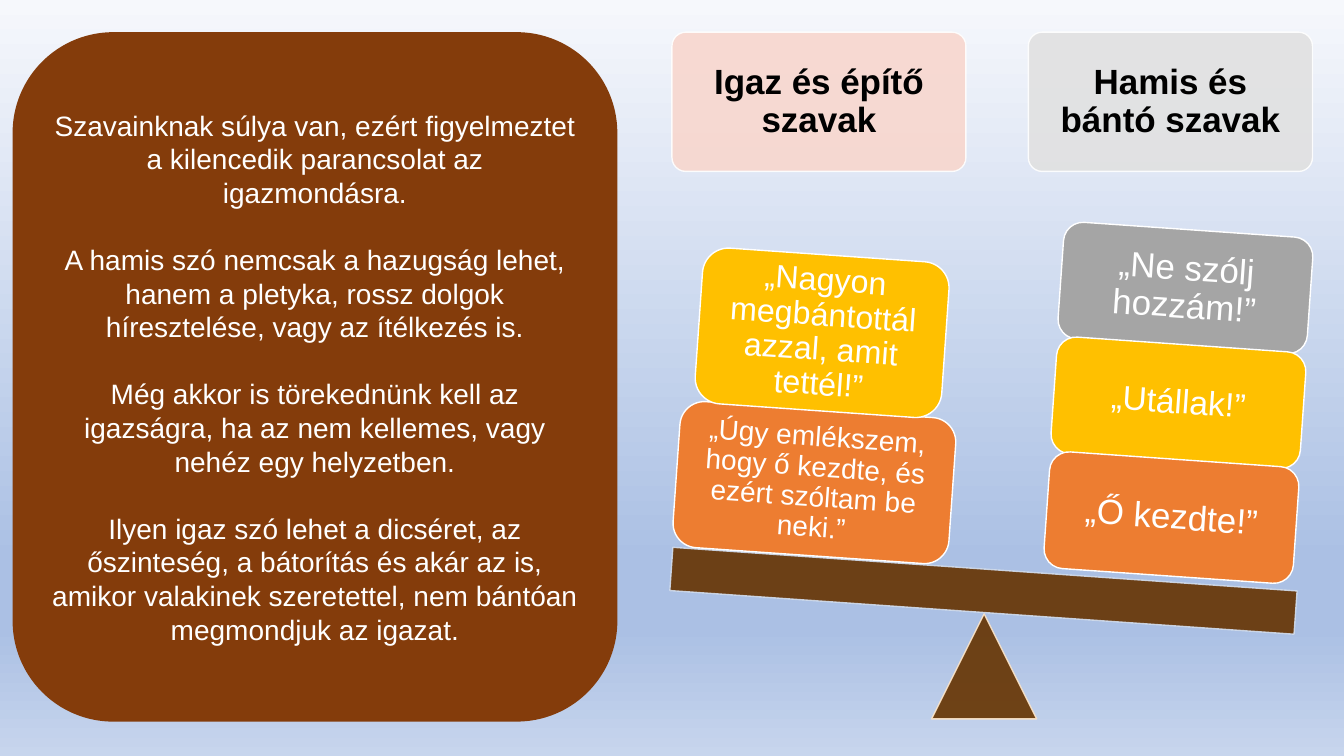
from copy import deepcopy

from pptx import Presentation
from pptx.dml.color import RGBColor
from pptx.enum.shapes import MSO_SHAPE as SHAPE
from pptx.enum.text import MSO_ANCHOR as ANCHOR, PP_ALIGN as ALIGN
from pptx.oxml.ns import qn
from pptx.util import Pt

COLORS = {
    "white": "FFFFFF", "black": "000000", "brown": "843C0B", "wood": "663300",
    "orange": "ED7D31", "yellow": "FFC000", "gray": "A5A5A5",
    "pink": "F8D7CE", "silver": "E1E1E1", "cream": "FFE8CC", "ice": "D2DEEF",
}
BACKGROUND = [(0, "F6F8FC"), (74, "ABC0E4"), (83, "ABC0E4"), (100, "C7D5ED")]
TILT = 4
LESSON = [
    "Szavainknak súlya van, ezért figyelmeztet a kilencedik parancsolat az igazmondásra.",
    "A hamis szó nemcsak a hazugság lehet, hanem a pletyka, rossz dolgok "
    "híresztelése, vagy az ítélkezés is.",
    "Még akkor is törekednünk kell az igazságra, ha az nem kellemes, vagy "
    "nehéz egy helyzetben.",
    "Ilyen igaz szó lehet a dicséret, az őszinteség, a bátorítás és akár az is, "
    "amikor valakinek szeretettel, nem bántóan megmondjuk az igazat.",
]
HURTFUL = [("„Ne szólj hozzám!”", "gray", 25), ("„Utállak!”", "yellow", 24),
           ("„Ő kezdte!”", "orange", 25)]


def rgb(name):
    return RGBColor.from_string(COLORS[name])


def set_opacity(fill, percent):
    color = fill._xPr.find(qn("a:solidFill"))[0]
    alpha = color.makeelement(qn("a:alpha"), {"val": str(percent * 1000)})
    color.append(alpha)


def paint_background(s):
    fill = s.background.fill
    fill.gradient()
    fill.gradient_angle = 270
    stops = fill._fill._gradFill.find(qn("a:gsLst"))
    while len(stops) < len(BACKGROUND):
        stops.append(deepcopy(stops[0]))
    for stop, (position, color) in zip(fill.gradient_stops, BACKGROUND):
        stop.position = position / 100
        stop.color.rgb = RGBColor.from_string(color)


def add_block(s, kind, box, fill, line=None, opacity=100, tilt=0):
    sp = s.shapes.add_shape(kind, *(Pt(v) for v in box))
    sp.shadow.inherit = False
    sp.rotation = tilt
    sp.fill.solid()
    sp.fill.fore_color.rgb = rgb(fill)
    if line:
        sp.line.color.rgb = rgb(line)
        sp.line.width = Pt(1)
    else:
        sp.line.fill.background()
    if opacity < 100:
        set_opacity(sp.fill, opacity)
        set_opacity(sp.line.fill, opacity)
    return sp


def add_text(sp, paragraphs, size, color="white", bold=False, spacing=None, gap=0, inset=7.2):
    tf = sp.text_frame
    tf.word_wrap = True
    tf.vertical_anchor = ANCHOR.MIDDLE
    tf.margin_left = tf.margin_right = Pt(inset)
    tf.margin_top = tf.margin_bottom = Pt(min(inset, 7.2))
    for i, text in enumerate(paragraphs):
        p = tf.add_paragraph() if i else tf.paragraphs[0]
        p.alignment = ALIGN.CENTER
        if spacing:
            p.line_spacing = spacing
        if i:
            p.space_before = Pt(gap)
        r = p.add_run()
        r.text = text
        r.font.name = "Arial"
        r.font.size = Pt(size)
        r.font.bold = bold
        r.font.color.rgb = rgb(color)


def add_header(s, left, width, text, fill):
    sp = add_block(s, SHAPE.ROUNDED_RECTANGLE, (left, 23, width, 99.5), fill, "white", 90)
    sp.adjustments[0] = 0.1
    add_text(sp, [text], 25, "black", bold=True, spacing=0.9)


def add_saying(s, box, text, fill, size, inset=7.2):
    sp = add_block(s, SHAPE.ROUNDED_RECTANGLE, box, fill, "white", tilt=TILT)
    add_text(sp, [text], size, spacing=0.9, inset=inset)


def main():
    prs = Presentation()
    prs.slide_width, prs.slide_height = Pt(960), Pt(540)
    s = prs.slides.add_slide(prs.slide_layouts[6])
    paint_background(s)

    add_header(s, 480, 210, "Igaz és építő szavak", "pink")
    add_header(s, 734.5, 203, "Hamis és bántó szavak", "silver")

    add_block(s, SHAPE.ISOSCELES_TRIANGLE, (665.5, 438.5, 75, 75), "wood", "cream", 90)
    add_block(s, SHAPE.RECTANGLE, (479, 406.5, 447, 31), "wood", "ice", 90, TILT)

    for i, (text, fill, size) in enumerate(HURTFUL):
        add_saying(s, (757.5 - 5 * i, 164 + 82 * i, 178.5, 83.5), text, fill, size)
    add_saying(s, (483, 292.5, 197.5, 104.5),
               "„Úgy emlékszem, hogy ő kezdte, és ezért szóltam be neki.”", "orange", 20, 5.8)
    add_saying(s, (499, 182, 176.5, 111.5),
               "„Nagyon megbántottál azzal, amit tettél!”", "yellow", 23)

    panel = add_block(s, SHAPE.ROUNDED_RECTANGLE, (9, 23, 432, 492.5), "brown")
    add_text(panel, LESSON, 20, gap=24)

    prs.save("out.pptx")


if __name__ == "__main__":
    main()
